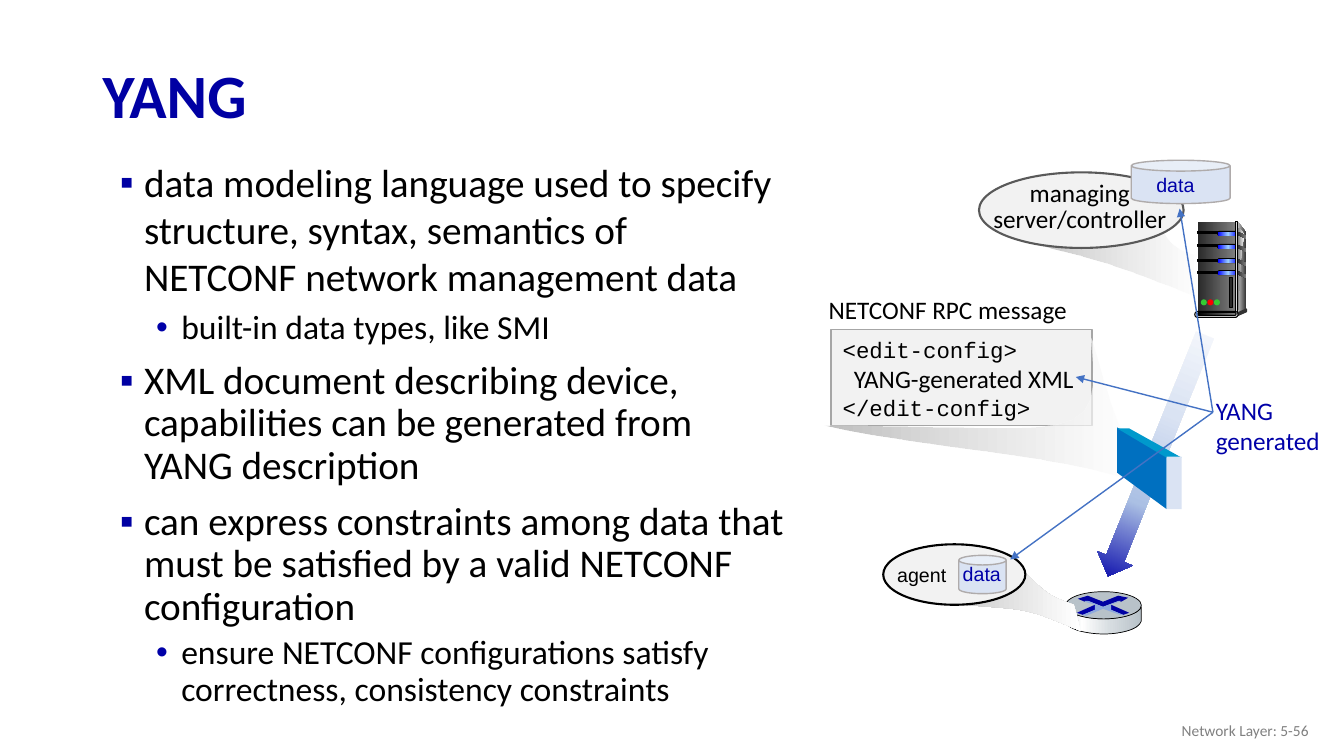
import lxml.etree
import pptx
import pptx.dml.color
import pptx.enum.shapes
import pptx.enum.text
import pptx.oxml
import pptx.oxml.ns
import pptx.util

SHAPE = pptx.enum.shapes.MSO_SHAPE
ALIGN = pptx.enum.text.PP_ALIGN
ANCHOR = pptx.enum.text.MSO_ANCHOR
FIT = pptx.enum.text.MSO_AUTO_SIZE
CM_PER_UNIT = 2.54  # places below are in inches

# Colours and gradients: (position, colour, optional opacity)
NAVY, BLUE, BLACK = "0000A3", "0000A8", "000000"
PALE, LIGHT, GREY = "F2F2F2", "DAE3F3", "AFABAB"
METAL = [(0, "B8C2C9"), (21, "FFFFFF"), (60, "D6DCE0"), (100, "B8C2C9")]
SOLID_BEAM = [(0, "BFBFBF"), (100, "FFFFFF")]
CLEAR_BEAM = [(0, "BFBFBF"), (100, "FFFFFF", 68)]
DARK = [(0, "292929"), (100, "808080")]
LAMP = [(0, "0000FF"), (50, "99CCFF"), (100, "0000FF")]
FLOW = [(0, "F6F8FC"), (35, LIGHT), (68, "ABC0E4"), (100, BLUE)]

# Bullets: level, line spacing, text
BULLETS = [
    (0, 1.0, "data modeling language used to specify structure, syntax, semantics of NETCONF network management data"),
    (1, 1.0, "built-in data types, like SMI"),
    (0, 0.9, "XML document describing device, capabilities can be generated from YANG description"),
    (0, 0.9, "can express constraints among data that must be satisfied by a valid NETCONF configuration"),
    (1, 0.9, "ensure NETCONF configurations satisfy correctness, consistency constraints"),
]
LEVELS = [  # bullet, its colour, text left, hanging, size, space before
    ("▪", NAVY, 0.39, -0.24, 28, 10),
    ("•", BLUE, 0.76, -0.25, 24, 5),
]

# Outlines: pairs are line ends, sixes are Bézier curves
ROUTER = [
    ("free", [(11.32, 6.02), (11.32, 6.16), (11.29, 6.26, 11.07, 6.29, 10.95, 6.29),
              (10.82, 6.29, 10.59, 6.26, 10.57, 6.16), (10.57, 6.02),
              (10.6, 6.1, 10.82, 6.14, 10.94, 6.14), (11.06, 6.14, 11.28, 6.11, 11.32, 6.02)],
     METAL, BLACK, 0.5),
    (SHAPE.OVAL, (10.57, 5.87, 0.75, 0.27), "B8C2C9", BLACK, 0.5),
    ("free", [(11.09, 5.91), (11.19, 5.93), (11.12, 5.97), (11.1, 5.96), (10.94, 6.02), (10.79, 5.96),
              (10.76, 5.97), (10.69, 5.94), (10.79, 5.91), (10.94, 5.97)], NAVY),
    ("free", [(11.02, 6), (11.2, 6.08), (11.14, 6.1), (11.02, 6.05)], NAVY),
    ("free", [(10.86, 6), (10.86, 6.05), (10.74, 6.1), (10.68, 6.08)], BLUE),
    ("free", [(10.76, 5.96), (10.79, 5.96), (10.94, 6.02), (11.1, 5.96), (11.12, 5.96), (11.02, 6),
              (11.02, 6.05), (11.14, 6.1), (11.11, 6.1), (10.94, 6.04), (10.77, 6.11), (10.74, 6.1),
              (10.86, 6.05), (10.86, 6), (10.76, 5.97)], "8FAADC"),
]
AGENT = [
    ("free", [(10.65, 6), (10.4, 5.91, 10.37, 5.9, 10.05, 5.55), (9.2, 5.97),
              (10.28, 6.07, 10.06, 5.99, 10.72, 6.26)], SOLID_BEAM),
    (SHAPE.OVAL, (8.76, 5.4, 1.41, 0.6), PALE, BLACK, 1.5),
    ("text", (8.8, 5.54, 0.69, 0.34), [("agent", "Arial", 14)], BLACK, {"word_wrap": False}),
    (SHAPE.CAN, (9.51, 5.51, 0.47, 0.38), LIGHT, GREY, 1),
    ("text", (9.45, 5.53, 0.58, 0.34), [("data", "Arial", 14)], BLUE, {"word_wrap": False}),
]
CONTROLLER = [
    ("free", [(11.85, 2.53), (11.67, 2.48, 11.61, 2.43, 11.54, 2.31), (10.98, 2.45, 11.02, 2.5, 10.15, 2.4),
              (11.09, 2.62, 11.18, 2.68, 11.9, 2.95)], CLEAR_BEAM),
    (SHAPE.OVAL, (9.71, 1.71, 2.03, 0.75), PALE, "595959", 1.5),
    ("text", (9.73, 1.76, 1.96, 0.62), [("managing", "Calibri", 18), ("server/controller", "Calibri", 18)],
     BLACK, {}, {"alignment": ALIGN.CENTER, "line_spacing": 0.85}),
    (SHAPE.CAN, (11.22, 1.59, 0.98, 0.43), LIGHT, GREY, 1),
    ("text", (11.37, 1.67, 0.65, 0.34), [("data", "Arial", 14)], BLUE),
]
SLOTS = [2.3, 2.43, 2.57, 2.69]
SERVER = [
    ("free", [(12.28, 2.2), (12.36, 2.31), (12.36, 3.07), (12.26, 3.1)], [(0, "DDDDDD"), (100, "333333")]),
    (SHAPE.RECTANGLE, (11.88, 2.2, 0.38, 0.9), DARK),
    ("free", [(12.28, 2.26), (12.28, 2.26, 12.3, 2.26, 12.34, 2.33), (12.28, 2.66, 12.29, 3.09, 12.28, 3.08)],
     [(0, "808080"), (100, "F8F8F8")]),
]
for top in SLOTS:
    SERVER += [
        (SHAPE.RECTANGLE, (11.88, top, 0.21, 0.02), BLACK, BLACK, 0.75),
        (SHAPE.ROUNDED_RECTANGLE, (12.07, top - 0.01, 0.21, 0.05), BLACK),
        (SHAPE.ROUNDED_RECTANGLE, (12.08, top, 0.2, 0.04), LAMP),
        ("free", [(12.27, top), (12.28, top, 12.32, top + 0.02, 12.36, top + 0.04), (12.36, top + 0.07),
                  (12.36, top + 0.07, 12.32, top + 0.05, 12.27, top + 0.03)], DARK),
    ]
SERVER += [
    (SHAPE.RECTANGLE, (12.25, 2.2, 0.02, 0.9), [(0, "333333"), (50, "DDDDDD"), (100, "333333")], BLACK, 0.75),
    (SHAPE.OVAL, (12.35, 3.06, 0.02, 0.04), "333333"),
    ("free", [(12.27, 3.1), (12.27, 3.14), (12.36, 3.1), (12.36, 3.06)], "333333"),
    (SHAPE.ROUNDED_RECTANGLE, (11.85, 3.09, 0.43, 0.06), "DDDDDD", BLACK, 0.75),
    (SHAPE.ROUNDED_RECTANGLE, (11.88, 3.1, 0.38, 0.03), [(0, BLACK), (100, "808080")], BLACK, 0.75),
    (SHAPE.RECTANGLE, (12.19, 2.75, 0.03, 0.3), "292929", BLACK, 0.75),
]
SERVER += [(SHAPE.OVAL, (11.91 + 0.065 * index, 2.97, 0.06, 0.06), colour)
           for index, colour in enumerate(["33CC33", "FF0000", "33CC33"])]
MESSAGE = [
    (SHAPE.RIGHT_ARROW, (10.18, 4.33, 2.58, 0.38), FLOW, None, 0, 111.9),
    ("text", (8.12, 2.87, 2.63, 0.4), [("NETCONF RPC message", "Calibri", 18)], BLACK),
    (SHAPE.RECTANGLE, (8.24, 3.27, 2.59, 0.95), PALE, "A6A6A6", 1),
    ("text", (8.26, 3.29, 2.63, 0.94), [("<edit-config>", "Courier New", 16),
     ("YANG-generated XML", "Calibri", 18, 0.11), ("</edit-config>", "Courier New", 16)], BLACK),
    ("free", [(11.21, 4.36), (11.04, 4.31, 10.88, 3.47, 10.81, 3.35), (10.95, 4.48, 10.67, 4.22, 8.18, 4.22),
              (9.12, 4.44, 10.5, 4.5, 11.22, 4.77)], CLEAR_BEAM),
]
PANEL = [
    ("free", [(11.08, 4.24), (11.08, 4.69), (11.57, 5.05), (11.57, 4.52)], "0070C0"),
    ("free", [(11.2, 4.25), (11.08, 4.25), (11.57, 4.54), (11.72, 4.54)], "0099CC"),
    (SHAPE.RECTANGLE, (11.57, 4.53, 0.15, 0.52), LIGHT),
    ("text", (11.96, 3.87, 1.25, 0.71), [("YANG", "Calibri", 18), ("generated", "Calibri", 18)],
     BLUE, {"word_wrap": False}),
]
HEADINGS = [
    ("text", (0.92, 0.49, 11.5, 0.98), [("YANG", "Calibri", 44)], NAVY,
     {"vertical_anchor": ANCHOR.MIDDLE, "auto_size": FIT.NONE}, {"line_spacing": 0.9}, {"bold": True}),
    ("text", (10.08, 7.05, 3, 0.4), [("Network Layer: 5-56", "Calibri", 11)], "808080",
     {"vertical_anchor": ANCHOR.MIDDLE, "auto_size": FIT.NONE}, {"alignment": ALIGN.RIGHT}),
]
ARROW_START = (12.03, 4.09)
ARROW_ENDS = [(11.7, 2.07), (10.02, 5.55), (10.67, 3.74)]


def length(value):
    return pptx.util.Cm(value * CM_PER_UNIT)


def rgb(colour):
    return pptx.dml.color.RGBColor.from_string(colour)


def apply(target, formats):
    for name, value in formats.items():
        setattr(target, name, value)


def add_element(parent, tag, **attributes):
    return lxml.etree.SubElement(parent, pptx.oxml.ns.qn(tag), attributes)


def paint(shape, colours):
    if isinstance(colours, str):
        shape.fill.solid()
        shape.fill.fore_color.rgb = rgb(colours)
        return
    shape.fill.gradient()
    shape.fill.gradient_angle = 0
    stops = shape._element.spPr.find(".//" + pptx.oxml.ns.qn("a:gsLst"))
    for stop in list(stops):
        stops.remove(stop)
    for position, colour, *opacity in colours:
        stop = add_element(stops, "a:gs", pos=str(position * 1000))
        tint = add_element(stop, "a:srgbClr", val=colour)
        for percent in opacity:
            add_element(tint, "a:alpha", val=str(percent * 1000))


def trace(outline, steps=12):
    points = [outline[0]]
    for node in outline[1:]:
        if len(node) == 2:
            points.append(node)
            continue
        corners = [points[-1], node[:2], node[2:4], node[4:]]
        for step in range(1, steps + 1):
            t = step / steps
            weights = [(1 - t) ** 3, 3 * t * (1 - t) ** 2, 3 * t ** 2 * (1 - t), t ** 3]
            points.append(tuple(sum(w * c[axis] for w, c in zip(weights, corners)) for axis in (0, 1)))
    return [(length(x), length(y)) for x, y in points]


def add_part(slide, kind, place, colours, line=None, width=0, rotation=0):
    if kind == "free":
        start, *others = trace(place)
        builder = slide.shapes.build_freeform(*start, scale=1.0)
        builder.add_line_segments(others, close=True)
        shape = builder.convert_to_shape()
    else:
        shape = slide.shapes.add_shape(kind, *map(length, place))
    if kind == SHAPE.ROUNDED_RECTANGLE:
        shape.adjustments[0] = 0.5
    shape.shadow.inherit = False
    shape.rotation = rotation
    paint(shape, colours)
    if line:
        apply(shape.line, {"width": pptx.util.Pt(width)})
        shape.line.color.rgb = rgb(line)
    else:
        shape.line.fill.background()


def add_text(slide, place, lines, colour, frame_format={}, paragraph_format={}, font_format={}):
    frame = slide.shapes.add_textbox(*map(length, place)).text_frame
    apply(frame, {"word_wrap": True, "auto_size": FIT.SHAPE_TO_FIT_TEXT, **frame_format})
    for index, (text, name, size, *indent) in enumerate(lines):
        paragraph = frame.add_paragraph() if index else frame.paragraphs[0]
        apply(paragraph, paragraph_format)
        for left in indent:
            paragraph._p.get_or_add_pPr().set("marL", str(length(left)))
        run = paragraph.add_run()
        run.text = text
        apply(run.font, {"name": name, "size": pptx.util.Pt(size), **font_format})
        run.font.color.rgb = rgb(colour)
    return frame


def add_bullets(slide):
    lines = [(text, "Calibri", LEVELS[level][4]) for level, _, text in BULLETS]
    frame = add_text(slide, (0.94, 1.52, 6.97, 5.66), lines, BLACK, {"auto_size": FIT.NONE})
    for paragraph, (level, spacing, _) in zip(frame.paragraphs, BULLETS):
        mark, colour, left, hanging, _, before = LEVELS[level]
        apply(paragraph, {"level": level, "line_spacing": spacing, "space_before": pptx.util.Pt(before)})
        properties = paragraph._p.get_or_add_pPr()
        properties.set("marL", str(length(left)))
        properties.set("indent", str(length(hanging)))
        add_element(add_element(properties, "a:buClr"), "a:srgbClr", val=colour)
        add_element(properties, "a:buFont", typeface="Arial")
        add_element(properties, "a:buChar", char=mark)


def add_arrow(slide, end):
    arrow = slide.shapes.add_connector(pptx.enum.shapes.MSO_CONNECTOR.STRAIGHT,
                                       *map(length, ARROW_START + end))
    arrow.line.width = pptx.util.Pt(1)
    arrow.line.color.rgb = rgb("4472C4")
    add_element(arrow.line._get_or_add_ln(), "a:tailEnd", type="triangle")
    add_element(arrow._element.spPr, "a:effectLst")


def main():
    presentation = pptx.Presentation()
    apply(presentation, {"slide_width": length(13.33), "slide_height": length(7.5)})
    slide = presentation.slides.add_slide(presentation.slide_layouts[6])
    add_bullets(slide)
    for kind, *details in HEADINGS + ROUTER + AGENT + CONTROLLER + SERVER + MESSAGE + PANEL:
        if kind == "text":
            add_text(slide, *details)
        else:
            add_part(slide, kind, *details)
    for end in ARROW_ENDS:
        add_arrow(slide, end)
    presentation.save("out.pptx")


if __name__ == "__main__":
    main()
